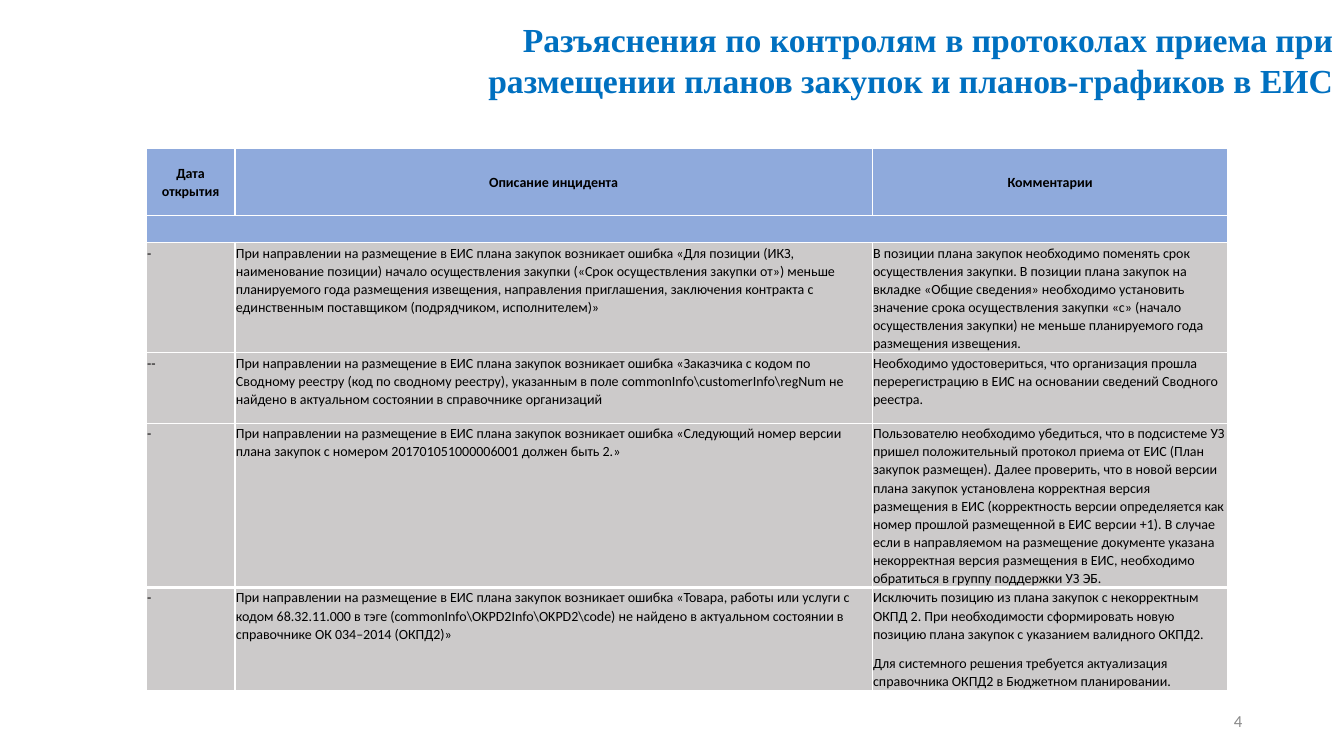
from dataclasses import dataclass

from lxml import etree
from pptx import Presentation
from pptx.dml.color import RGBColor
from pptx.enum.text import MSO_ANCHOR, MSO_AUTO_SIZE, PP_ALIGN
from pptx.oxml.ns import qn
from pptx.util import Inches, Pt

LEFT, CENTER, RIGHT = PP_ALIGN.LEFT, PP_ALIGN.CENTER, PP_ALIGN.RIGHT
TOP, MIDDLE = MSO_ANCHOR.TOP, MSO_ANCHOR.MIDDLE
NO_AUTOFIT = MSO_AUTO_SIZE.NONE
TITLE_ONLY = 5


@dataclass(frozen=True)
class Theme:
    title_font: str = "Times New Roman"
    body_font: str = "Calibri"
    title_color: str = "0070C0"
    text_color: str = "000000"
    number_color: str = "898989"
    header_fill: str = "8FAADC"
    body_fill: str = "CCCACA"
    border_color: str = "FFFFFF"
    title_size: int = 24
    table_size: int = 10
    number_size: int = 12
    border_width: int = 1
    thick_border_width: int = 3


@dataclass(frozen=True)
class Incident:
    opened: str
    description: str
    comments: tuple[str, ...]
    height: float
    space_after: int = 8
    top_border: int = Theme.border_width


THEME = Theme()
ERROR = "При направлении на размещение в ЕИС плана закупок возникает ошибка "
TITLE = "Разъяснения по контролям в протоколах приема при размещении планов закупок и планов-графиков в ЕИС"
HEADINGS = ("Дата открытия", "Описание инцидента", "Комментарии")
COLUMN_WIDTHS = (0.88, 6.32, 3.53)
HEADER_HEIGHTS = (0.67, 0.27)

INCIDENTS = (
    Incident(
        "-",
        ERROR + "«Для позиции (ИКЗ, наименование позиции) начало осуществления закупки "
        "(«Срок осуществления закупки от») меньше планируемого года размещения извещения, "
        "направления приглашения, заключения контракта с единственным поставщиком "
        "(подрядчиком, исполнителем)»",
        ("В позиции плана закупок необходимо поменять срок осуществления закупки. "
         "В позиции плана закупок на вкладке «Общие сведения» необходимо установить значение "
         "срока осуществления закупки «с» (начало осуществления закупки) не меньше "
         "планируемого года размещения извещения.",),
        1.08,
        space_after=0,
    ),
    Incident(
        "--",
        ERROR + "«Заказчика с кодом по Сводному реестру (код по сводному реестру), указанным "
        "в поле commonInfo\\customerInfo\\regNum не найдено в актуальном состоянии "
        "в справочнике организаций",
        ("Необходимо удостовериться, что организация прошла перерегистрацию в ЕИС "
         "на основании сведений Сводного реестра.",),
        0.7,
    ),
    Incident(
        "-",
        ERROR + "«Следующий номер версии плана закупок с номером 201701051000006001 "
        "должен быть 2.»",
        ("Пользователю необходимо убедиться, что в подсистеме УЗ пришел положительный протокол "
         "приема от ЕИС (План закупок размещен). Далее проверить, что в новой версии плана "
         "закупок установлена корректная версия размещения в ЕИС (корректность версии "
         "определяется как номер прошлой размещенной в ЕИС версии +1). В случае если "
         "в направляемом на размещение документе указана некорректная версия размещения в ЕИС, "
         "необходимо обратиться в группу поддержки УЗ ЭБ.",),
        1.62,
    ),
    Incident(
        "-",
        ERROR + "«Товара, работы или услуги с кодом 68.32.11.000 в тэге "
        "(commonInfo\\OKPD2Info\\OKPD2\\code) не найдено в актуальном состоянии "
        "в справочнике ОК 034–2014 (ОКПД2)»",
        ("Исключить позицию из плана закупок с некорректным ОКПД 2. При необходимости "
         "сформировать новую позицию плана закупок с указанием валидного ОКПД2.",
         "Для системного решения требуется актуализация справочника ОКПД2 "
         "в Бюджетном планировании."),
        1.01,
        top_border=THEME.thick_border_width,
    ),
)


def write_text(frame, *paragraphs: str, size: int = THEME.table_size,
               font: str = THEME.body_font, color: str = THEME.text_color,
               bold: bool = False, align=LEFT, line_spacing: float = 1.0,
               space_after: int = 0) -> None:
    frame.word_wrap = True
    for index, text in enumerate(paragraphs):
        paragraph = frame.add_paragraph() if index else frame.paragraphs[0]
        paragraph.alignment = align
        paragraph.line_spacing = line_spacing
        paragraph.space_before = Pt(0)
        paragraph.space_after = Pt(space_after)
        run = paragraph.add_run()
        run.text = text
        run.font.size = Pt(size)
        run.font.name = font
        run.font.bold = bold
        run.font.color.rgb = RGBColor.from_string(color)


def style_cell(cell, fill: str, anchor=TOP, top_border: int = THEME.border_width) -> None:
    cell.margin_left = cell.margin_right = cell.margin_top = Inches(0.01)
    cell.margin_bottom = 0
    cell.vertical_anchor = anchor
    properties = cell._tc.get_or_add_tcPr()
    for side in ("lnL", "lnR", "lnT", "lnB"):
        width = top_border if side == "lnT" else THEME.border_width
        line = etree.SubElement(properties, qn(f"a:{side}"), w=str(Pt(width)))
        line_fill = etree.SubElement(line, qn("a:solidFill"))
        etree.SubElement(line_fill, qn("a:srgbClr"), val=THEME.border_color)
    cell.fill.solid()
    cell.fill.fore_color.rgb = RGBColor.from_string(fill)


def add_title(slide) -> None:
    title = slide.shapes.title
    title.left, title.top = Inches(4.34), Inches(0)
    title.width, title.height = Inches(8.98), Inches(1.18)
    title.text_frame.auto_size = NO_AUTOFIT
    title.text_frame.vertical_anchor = MIDDLE
    write_text(title.text_frame, TITLE, size=THEME.title_size, font=THEME.title_font,
               color=THEME.title_color, bold=True, align=RIGHT)


def add_incident_table(slide) -> None:
    heights = HEADER_HEIGHTS + tuple(incident.height for incident in INCIDENTS)
    table = slide.shapes.add_table(
        len(heights), len(COLUMN_WIDTHS), Inches(1.45), Inches(1.47),
        Inches(sum(COLUMN_WIDTHS)), Inches(sum(heights))).table
    table.first_row = table.horz_banding = False
    for column, width in zip(table.columns, COLUMN_WIDTHS):
        column.width = Inches(width)
    for row, height in zip(table.rows, heights):
        row.height = Inches(height)

    for column, heading in enumerate(HEADINGS):
        header = table.cell(0, column)
        style_cell(header, THEME.header_fill, anchor=MIDDLE)
        write_text(header.text_frame, heading, bold=True, align=CENTER,
                   line_spacing=1.07, space_after=8)
        band = table.cell(1, column)
        style_cell(band, THEME.header_fill)
        etree.SubElement(band.text_frame.paragraphs[0]._p, qn("a:endParaRPr"),
                         sz=str(THEME.table_size * 100))
    table.cell(1, 0).merge(table.cell(1, len(HEADINGS) - 1))

    for row, incident in enumerate(INCIDENTS, start=len(HEADER_HEIGHTS)):
        contents = ((incident.opened,), (incident.description,), incident.comments)
        spacings = (8, 8, incident.space_after)
        for column, (paragraphs, spacing) in enumerate(zip(contents, spacings)):
            cell = table.cell(row, column)
            style_cell(cell, THEME.body_fill, top_border=incident.top_border)
            write_text(cell.text_frame, *paragraphs, line_spacing=1.07, space_after=spacing)


def add_page_number(slide) -> None:
    page_number = slide.shapes.add_textbox(Inches(9.42), Inches(6.95), Inches(3), Inches(0.4))
    page_number.text_frame.vertical_anchor = MIDDLE
    write_text(page_number.text_frame, "4", size=THEME.number_size,
               color=THEME.number_color, align=RIGHT)


def main() -> None:
    presentation = Presentation()
    presentation.slide_width, presentation.slide_height = Inches(13.33), Inches(7.5)
    slide = presentation.slides.add_slide(presentation.slide_layouts[TITLE_ONLY])
    add_title(slide)
    add_incident_table(slide)
    add_page_number(slide)
    presentation.save("out.pptx")


if __name__ == "__main__":
    main()
